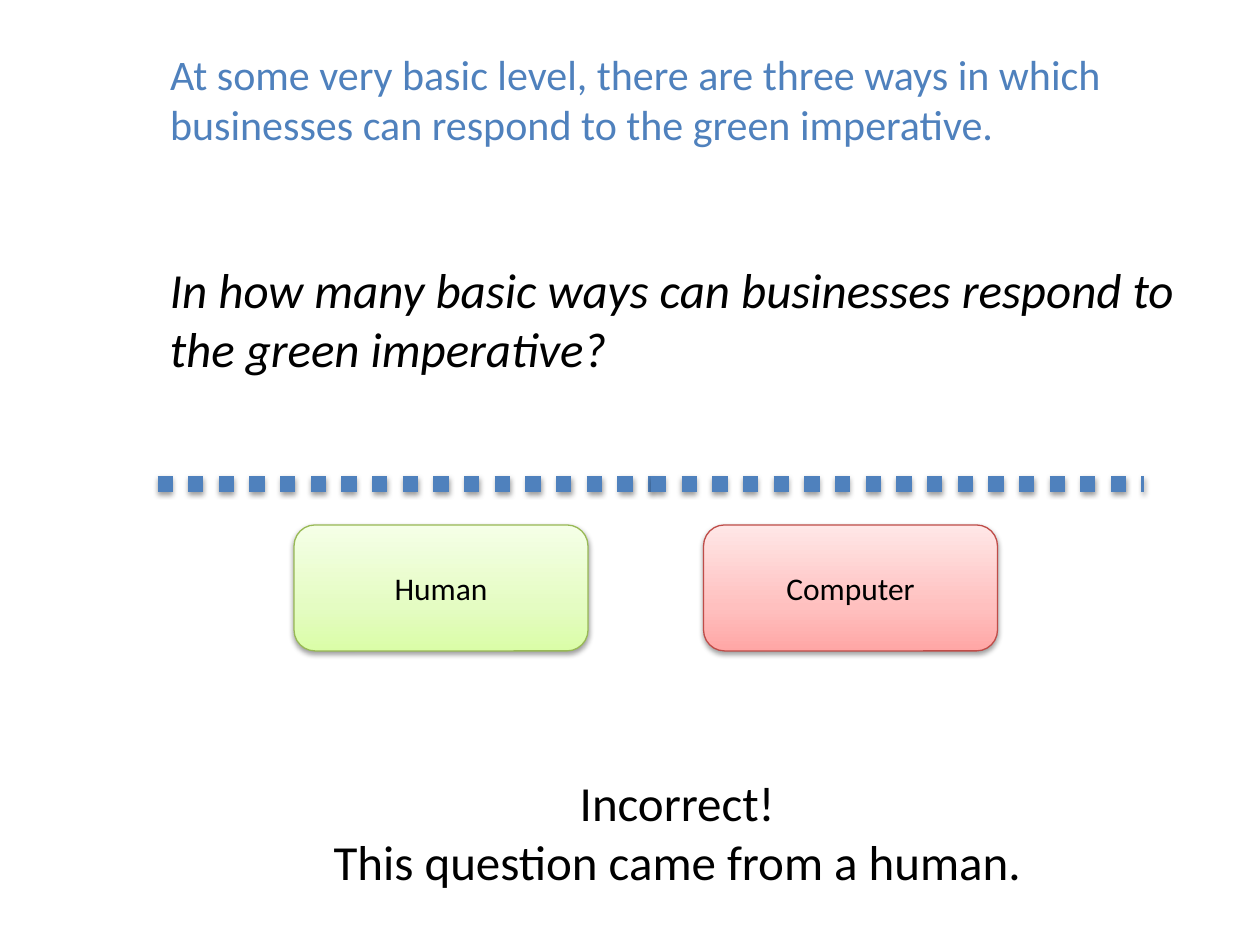
from copy import deepcopy

from pptx import Presentation
from pptx.dml.color import RGBColor
from pptx.enum.dml import MSO_LINE
from pptx.enum.shapes import MSO_CONNECTOR, MSO_SHAPE
from pptx.enum.text import MSO_ANCHOR, MSO_AUTO_SIZE, PP_ALIGN
from pptx.oxml import parse_xml
from pptx.oxml.ns import nsdecls, qn
from pptx.util import Emu, Pt

EMU_PER_PX = 7620
FONT = "Calibri"
BLACK = RGBColor(0x00, 0x00, 0x00)
BLUE = RGBColor(0x4F, 0x81, 0xBD)
GREEN_LINE = RGBColor(0x98, 0xB9, 0x55)
GREEN_STOPS = (
    RGBColor(0xDA, 0xFD, 0xA7),
    RGBColor(0xE4, 0xFC, 0xC2),
    RGBColor(0xF5, 0xFF, 0xE7),
)
RED_LINE = RGBColor(0xBF, 0x4C, 0x48)
RED_STOPS = (
    RGBColor(0xFF, 0xA6, 0xA5),
    RGBColor(0xFF, 0xC0, 0xBF),
    RGBColor(0xFF, 0xE7, 0xE7),
)
STOP_POSITIONS = (0, 0.35, 1)
SHADOW_XML = (
    f'<a:effectLst {nsdecls("a")}>'
    '<a:outerShdw blurRad="40000" dist="20000" dir="5400000" rotWithShape="0">'
    '<a:srgbClr val="000000"><a:alpha val="38000"/></a:srgbClr>'
    "</a:outerShdw></a:effectLst>"
)


def px(length):
    return Emu(length * EMU_PER_PX)


def add_shadow(shape):
    shape._element.spPr.append(parse_xml(SHADOW_XML))


def write_text(shape, text, size, color=BLACK, align=PP_ALIGN.LEFT,
               anchor=MSO_ANCHOR.TOP, italic=False):
    text_frame = shape.text_frame
    text_frame.text = text
    text_frame.word_wrap = True
    text_frame.auto_size = MSO_AUTO_SIZE.NONE
    text_frame.vertical_anchor = anchor
    for paragraph in text_frame.paragraphs:
        paragraph.alignment = align
        for run in paragraph.runs:
            run.font.name = FONT
            run.font.size = Pt(size)
            run.font.italic = italic
            run.font.color.rgb = color


def place_title(slide, text, left, top, width, height):
    title = slide.shapes.title
    title.left, title.top = px(left), px(top)
    title.width, title.height = px(width), px(height)
    write_text(title, text, 24, BLUE)


def add_text(slide, text, left, top, width, height, **style):
    box = slide.shapes.add_textbox(px(left), px(top), px(width), px(height))
    write_text(box, text, 28, **style)


def fill_gradient(shape, colors):
    shape.fill.gradient()
    shape.fill.gradient_angle = 90
    stop_list = shape._element.spPr.find(qn("a:gradFill")).find(qn("a:gsLst"))
    stop_list.insert(1, deepcopy(stop_list[0]))
    for stop, position, color in zip(shape.fill.gradient_stops, STOP_POSITIONS, colors):
        stop.position = position
        stop.color.rgb = color


def add_button(slide, text, left, top, stops, line_color):
    button = slide.shapes.add_shape(
        MSO_SHAPE.ROUNDED_RECTANGLE, px(left), px(top), px(280), px(120))
    fill_gradient(button, stops)
    button.line.color.rgb = line_color
    button.line.width = Pt(0.75)
    add_shadow(button)
    write_text(button, text, 18, align=PP_ALIGN.CENTER, anchor=MSO_ANCHOR.MIDDLE)


def add_dotted_line(slide, start, end, y):
    line = slide.shapes.add_connector(
        MSO_CONNECTOR.STRAIGHT, px(start), px(y), px(end), px(y))
    line.line.color.rgb = BLUE
    line.line.width = Pt(8.75)
    line.line.dash_style = MSO_LINE.ROUND_DOT
    add_shadow(line)


def main():
    presentation = Presentation()
    presentation.slide_width = px(1200)
    presentation.slide_height = px(900)
    slide = presentation.slides.add_slide(presentation.slide_layouts[5])

    place_title(
        slide,
        "At some very basic level, there are three ways in which businesses "
        "can respond to the green imperative.",
        150, 40, 1020, 109)
    add_text(
        slide,
        "In how many basic ways can businesses respond to the green imperative?",
        150, 241, 1020, 125, italic=True)
    add_button(slide, "Human", 280, 500, GREEN_STOPS, GREEN_LINE)
    add_button(slide, "Computer", 670, 500, RED_STOPS, RED_LINE)
    for start, end in ((150, 620), (620, 1090)):
        add_dotted_line(slide, start, end, 461)
    add_text(
        slide,
        "Incorrect!\nThis question came from a human.",
        230, 730, 830, 125, align=PP_ALIGN.CENTER)

    presentation.save("out.pptx")


if __name__ == "__main__":
    main()
